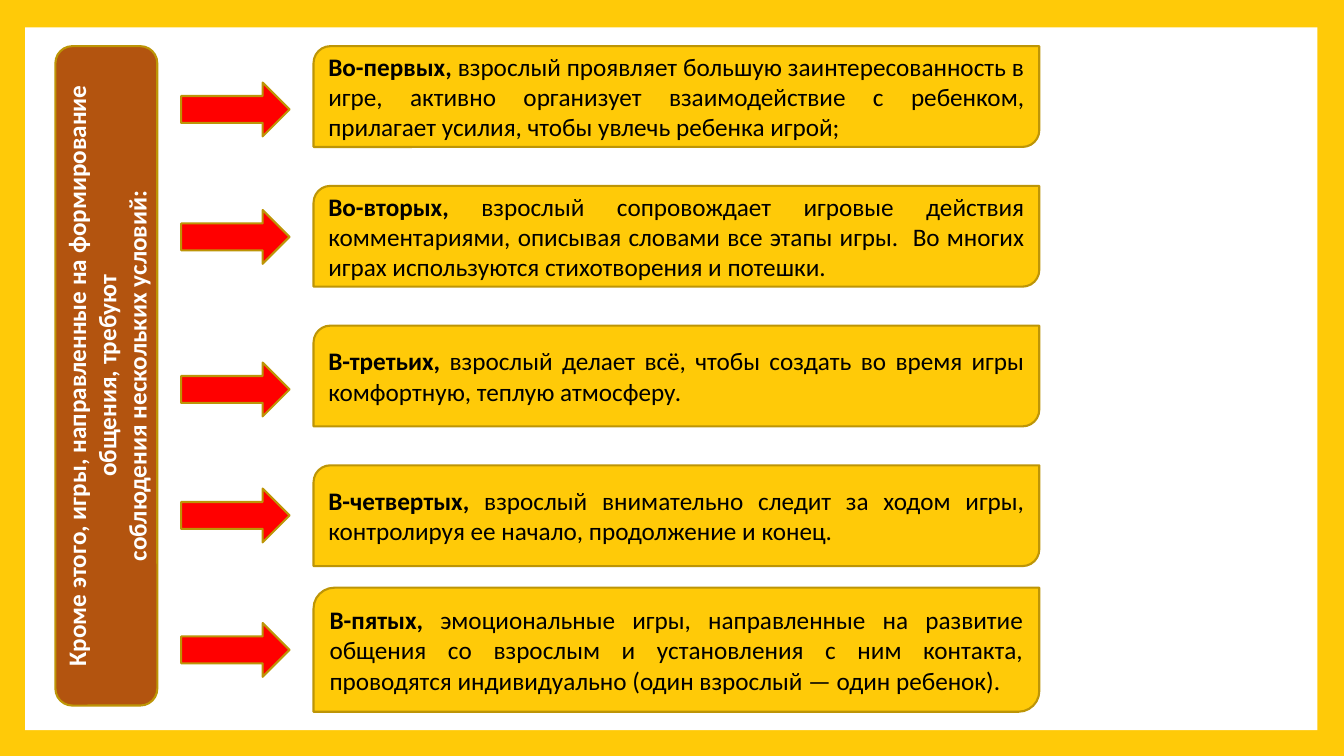
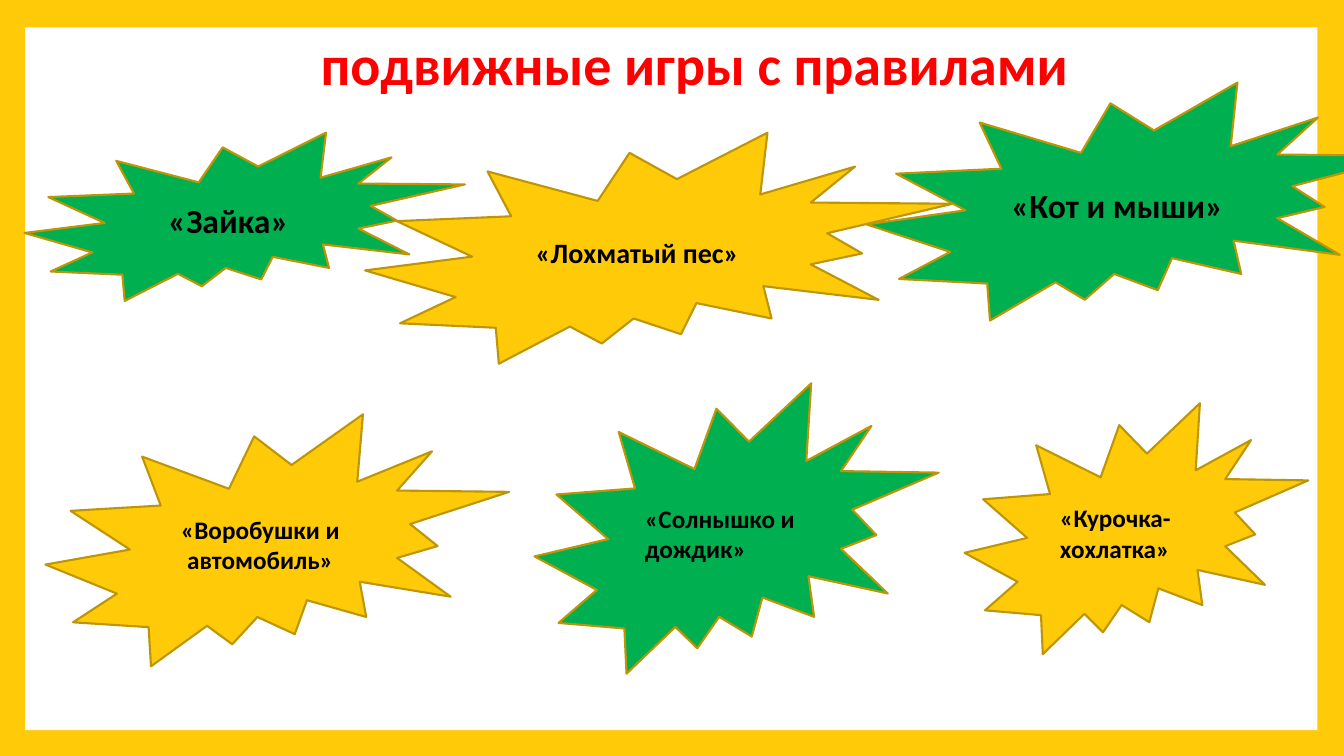
from pptx import Presentation
from pptx.dml.color import RGBColor
from pptx.enum.shapes import MSO_SHAPE as SHAPE
from pptx.enum.text import MSO_ANCHOR as ANCHOR, MSO_AUTO_SIZE as AUTO_SIZE, PP_ALIGN as ALIGN
from pptx.util import Pt

FONT = "Calibri"
COLORS = {
    "gold": "FFCA08", "outline": "BD9506", "brown": "B3540F", "red": "FF0000",
    "green": "00B050", "white": "FFFFFF", "black": "000000",
}
SLIDE_WIDTH, SLIDE_HEIGHT = 960, 540
PANEL = (18, 19.5, 923, 502)

BANNER = [
    "Кроме этого, игры, направленные на формирование общения, требуют",
    "соблюдения нескольких условий:",
]
BANNER_AREA = (39.6, 33, 72.8, 471)

# Lead words, the rest of the sentence, top of the arrow
CONDITIONS = [
    ("Во-первых,",
     " взрослый проявляет большую заинтересованность в игре, активно организует "
     "взаимодействие с ребенком, прилагает усилия, чтобы увлечь ребенка игрой;", 59),
    ("Во-вторых,",
     " взрослый сопровождает игровые действия комментариями, описывая словами "
     "все этапы игры.  Во многих играх используются стихотворения и потешки.", 150),
    ("В-третьих,",
     " взрослый делает всё, чтобы создать во время игры комфортную, теплую атмосферу.", 259),
    ("В-четвертых,",
     " взрослый внимательно следит за ходом игры, контролируя ее начало, "
     "продолжение и конец.", 349),
    ("В-пятых,",
     " эмоциональные игры, направленные на развитие общения со взрослым и установления "
     "с ним контакта, проводятся индивидуально (один взрослый — один ребенок).", 445),
]
CARD_LEFT, CARD_TOP, CARD_WIDTH, CARD_HEIGHT, CARD_STEP = 224, 33, 518.4, 72, 99.8
LAST_CARD_TOP, LAST_CARD_HEIGHT = 419.8, 88.6
ARROW_LEFT, ARROW_WIDTH, ARROW_HEIGHT = 129.4, 77.4, 38.4

GAMES_TITLE = "подвижные игры с правилами"
TITLE_AREA = (208, 17.3, 576, 55.4)

# Name, colour, text size, alignment, area
GAMES = [
    ("«Зайка»", "green", 24, ALIGN.CENTER, (17.5, 94.8, 314.6, 120.2)),
    ("«Воробушки и автомобиль»", "gold", 18, ALIGN.CENTER, (32.5, 296, 331.2, 180)),
    ("«Лохматый пес»", "gold", 20, ALIGN.CENTER, (260.8, 94.8, 419.8, 165)),
    ("«Кот и мыши»", "green", 24, ALIGN.JUSTIFY, (619.2, 59, 386.6, 170)),
    ("«Солнышко и дождик»", "green", 18, ALIGN.LEFT, (381.8, 273.8, 288.7, 207.4)),
    ("«Курочка-хохлатка»", "gold", 18, ALIGN.LEFT, (689, 288, 245.5, 179.3)),
]


def rgb(name):
    return RGBColor.from_string(COLORS[name])


def points(area):
    return [Pt(length) for length in area]


def add_shape(page, kind, area, color, outline="outline"):
    shape = page.shapes.add_shape(kind, *points(area))
    shape.shadow.inherit = False
    shape.fill.solid()
    shape.fill.fore_color.rgb = rgb(color)
    if outline:
        shape.line.color.rgb = rgb(outline)
        shape.line.width = Pt(1.5)
    else:
        shape.line.fill.background()
    return shape


def write(shape, paragraphs, align, size=18, color="black"):
    """Fill a shape with paragraphs, each a list of (text, bold) spans."""
    frame = shape.text_frame
    frame.vertical_anchor = ANCHOR.MIDDLE
    for index, spans in enumerate(paragraphs):
        para = frame.add_paragraph() if index else frame.paragraphs[0]
        para.alignment = align
        for text, bold in spans:
            span = para.add_run()
            span.text = text
            span.font.name = FONT
            span.font.size = Pt(size)
            span.font.bold = bold
            span.font.color.rgb = rgb(color)


def add_page(deck):
    page = deck.slides.add_slide(deck.slide_layouts[6])
    page.background.fill.solid()
    page.background.fill.fore_color.rgb = rgb("gold")
    add_shape(page, SHAPE.RECTANGLE, PANEL, "white", outline=None)
    return page


def build_conditions(deck):
    page = add_page(deck)
    banner = add_shape(page, SHAPE.ROUNDED_RECTANGLE, BANNER_AREA, "brown")
    write(banner, [[(line, True)] for line in BANNER], ALIGN.CENTER, color="white")
    banner.text_frame._txBody.bodyPr.set("vert", "vert270")

    for index, (lead, rest, arrow_top) in enumerate(CONDITIONS):
        top, height = CARD_TOP + index * CARD_STEP, CARD_HEIGHT
        if index == len(CONDITIONS) - 1:
            top, height = LAST_CARD_TOP, LAST_CARD_HEIGHT
        card = add_shape(page, SHAPE.ROUND_2_DIAG_RECTANGLE,
                         (CARD_LEFT, top, CARD_WIDTH, height), "gold")
        write(card, [[(lead, True), (rest, False)]], ALIGN.JUSTIFY)
        add_shape(page, SHAPE.RIGHT_ARROW,
                  (ARROW_LEFT, arrow_top, ARROW_WIDTH, ARROW_HEIGHT), "red")


def build_games(deck):
    page = add_page(deck)
    title = page.shapes.add_textbox(*points(TITLE_AREA))
    title.text_frame.word_wrap = False
    title.text_frame.auto_size = AUTO_SIZE.SHAPE_TO_FIT_TEXT
    write(title, [[(GAMES_TITLE, True)]], ALIGN.CENTER, size=40, color="red")

    for name, color, size, align, area in GAMES:
        burst = add_shape(page, SHAPE.EXPLOSION2, area, color)
        write(burst, [[(name, True)]], align, size)


def main():
    deck = Presentation()
    deck.slide_width, deck.slide_height = Pt(SLIDE_WIDTH), Pt(SLIDE_HEIGHT)
    build_conditions(deck)
    build_games(deck)
    deck.save("out.pptx")


if __name__ == "__main__":
    main()
